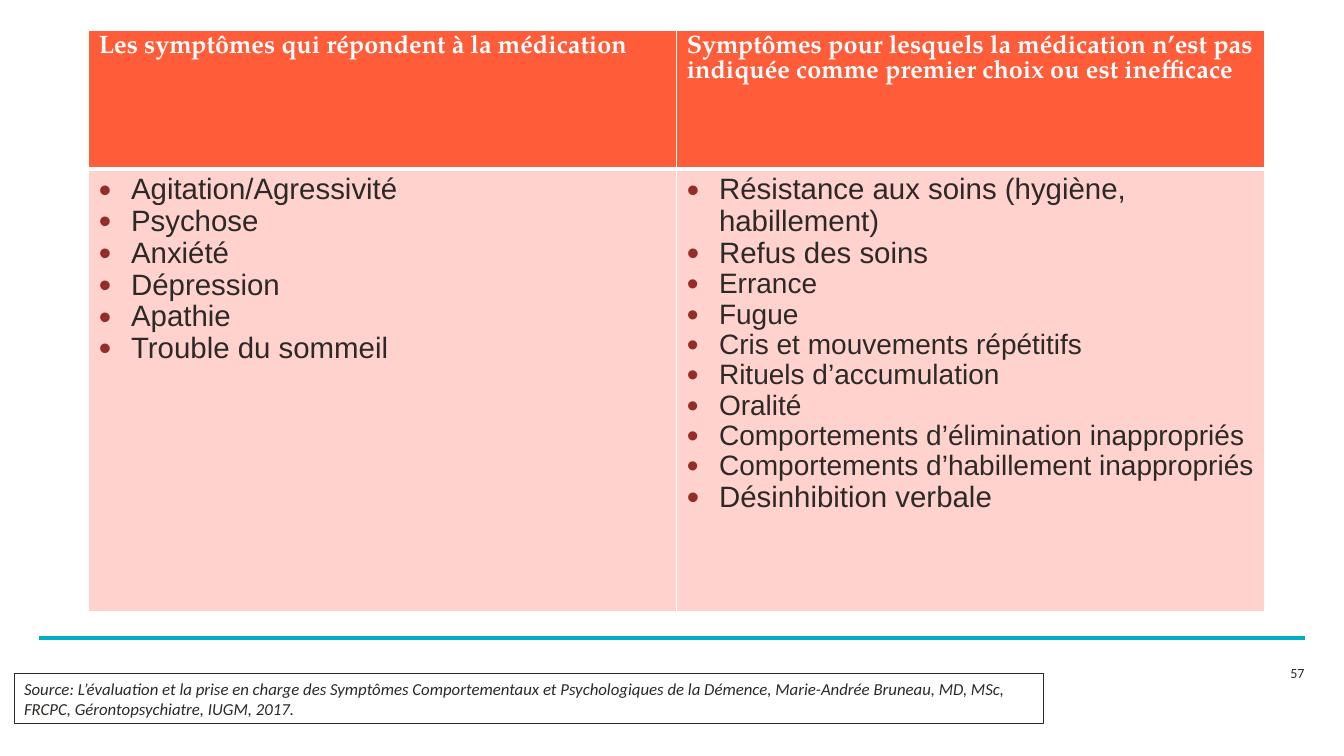
from dataclasses import dataclass

from lxml import etree
from pptx import Presentation
from pptx.dml.color import RGBColor
from pptx.enum.shapes import MSO_CONNECTOR, MSO_SHAPE
from pptx.enum.text import MSO_ANCHOR, PP_ALIGN
from pptx.oxml.ns import qn
from pptx.util import Inches, Pt

STRAIGHT = MSO_CONNECTOR.STRAIGHT
RECTANGLE = MSO_SHAPE.RECTANGLE
TOP, MIDDLE = MSO_ANCHOR.TOP, MSO_ANCHOR.MIDDLE
LEFT = PP_ALIGN.LEFT

WIDTH, HEIGHT = Inches(13.33), Inches(7.5)
INK, WHITE, TEAL = "2D2926", "FFFFFF", "00AEC7"
ORANGE, PINK, BULLET = "FF5C39", "FFD2CE", "932D25"
INDENT = Inches(0.32)


@dataclass
class Area:
    left: float
    top: float
    width: float
    height: float

    def box(self) -> tuple:
        return across(self.left), down(self.top), across(self.width), down(self.height)


@dataclass
class Item:
    text: str
    size: float = 21


@dataclass
class Column:
    heading: str
    items: list[Item]


TABLE = Area(6.6, 4, 87.5, 76.93)
ROW_SHARES = (18.4, 58.53)
NUMBER = Area(95.27, 87.2, 4.73, 5.33)
SOURCE = Area(1.05, 89.07, 76.6, 6.67)
RULE_LEFT, RULE_RIGHT, RULE_TOP = 2.93, 97.07, 84.4

COLUMNS = [
    Column("Les symptômes qui répondent à la médication", [
        Item("Agitation/Agressivité"),
        Item("Psychose"),
        Item("Anxiété"),
        Item("Dépression"),
        Item("Apathie"),
        Item("Trouble du sommeil"),
    ]),
    Column("Symptômes pour lesquels la médication n’est pas indiquée "
           "comme premier choix ou est inefficace", [
        Item("Résistance aux soins (hygiène, habillement)"),
        Item("Refus des soins"),
        Item("Errance", 20),
        Item("Fugue", 20),
        Item("Cris et mouvements répétitifs", 20),
        Item("Rituels d’accumulation", 20),
        Item("Oralité", 20),
        Item("Comportements d’élimination inappropriés", 20),
        Item("Comportements d’habillement inappropriés", 20),
        Item("Désinhibition verbale"),
    ]),
]
CITATION = ("Source: L’évaluation et la prise en charge des Symptômes Comportementaux et "
            "Psychologiques de la Démence, Marie-Andrée Bruneau, MD, MSc, FRCPC, "
            "Gérontopsychiatre, IUGM, 2017.")


def across(share: float) -> int:
    return round(WIDTH * share / 100)


def down(share: float) -> int:
    return round(HEIGHT * share / 100)


def rgb(color: str) -> RGBColor:
    return RGBColor.from_string(color)


def write(p, text: str, *, size: float, font: str = "Calibri", color: str = INK,
          bold: bool = False, italic: bool = False, spacing=None) -> None:
    p.alignment = LEFT
    if spacing is not None:
        p.line_spacing = spacing
    r = p.add_run()
    r.text = text
    r.font.size, r.font.name = Pt(size), font
    r.font.bold, r.font.italic = bold, italic
    r.font.color.rgb = rgb(color)


def add_bullet(p) -> None:
    pPr = p._p.get_or_add_pPr()
    pPr.set("marL", str(INDENT))
    pPr.set("indent", str(-INDENT))
    color = etree.SubElement(pPr, qn("a:buClr"))
    etree.SubElement(color, qn("a:srgbClr"), val=BULLET)
    etree.SubElement(pPr, qn("a:buSzPct"), val="120000")
    etree.SubElement(pPr, qn("a:buFont"), typeface="Arial")
    etree.SubElement(pPr, qn("a:buChar"), char="•")


def style_cell(cell, fill: str, **widths: float) -> None:
    tcPr = cell._tc.get_or_add_tcPr()
    for side in "LRTB":
        ln = etree.SubElement(tcPr, qn(f"a:ln{side}"), w=str(Pt(widths.get(side, 1))))
        solid = etree.SubElement(ln, qn("a:solidFill"))
        etree.SubElement(solid, qn("a:srgbClr"), val=WHITE)
    cell.fill.solid()
    cell.fill.fore_color.rgb = rgb(fill)
    cell.vertical_anchor = TOP


def add_symptoms(s) -> None:
    table = s.shapes.add_table(len(ROW_SHARES), len(COLUMNS), *TABLE.box()).table
    for row, share in zip(table.rows, ROW_SHARES):
        row.height = down(share)
    for i, column in enumerate(COLUMNS):
        table.columns[i].width = across(TABLE.width / len(COLUMNS))
        head, body = table.cell(0, i), table.cell(1, i)
        style_cell(head, ORANGE, B=3)
        style_cell(body, PINK, T=3)
        write(head.text_frame.paragraphs[0], column.heading, size=18,
              font="TeX Gyre Pagella", color=WHITE, bold=True, spacing=Pt(17.9))
        tf = body.text_frame
        for n, item in enumerate(column.items):
            p = tf.add_paragraph() if n else tf.paragraphs[0]
            add_bullet(p)
            write(p, item.text, size=item.size, font="Arial", spacing=0.97)


def add_rule(s) -> None:
    y = down(RULE_TOP)
    rule = s.shapes.add_connector(STRAIGHT, across(RULE_LEFT), y, across(RULE_RIGHT), y)
    rule.line.color.rgb = rgb(TEAL)
    rule.line.width = Pt(3)
    etree.SubElement(rule._element.spPr, qn("a:effectLst"))


def add_number(s) -> None:
    tf = s.shapes.add_textbox(*NUMBER.box()).text_frame
    tf.word_wrap = True
    write(tf.paragraphs[0], "57", size=10)


def add_source(s) -> None:
    sp = s.shapes.add_shape(RECTANGLE, *SOURCE.box())
    sp.shadow.inherit = False
    sp.fill.background()
    sp.line.color.rgb = rgb(INK)
    sp.line.width = Pt(0.75)
    tf = sp.text_frame
    tf.word_wrap = True
    tf.vertical_anchor = MIDDLE
    write(tf.paragraphs[0], CITATION, size=12, italic=True)


def main() -> None:
    prs = Presentation()
    prs.slide_width, prs.slide_height = WIDTH, HEIGHT
    s = prs.slides.add_slide(prs.slide_layouts[6])
    add_number(s)
    add_rule(s)
    add_symptoms(s)
    add_source(s)
    prs.save("out.pptx")


if __name__ == "__main__":
    main()
